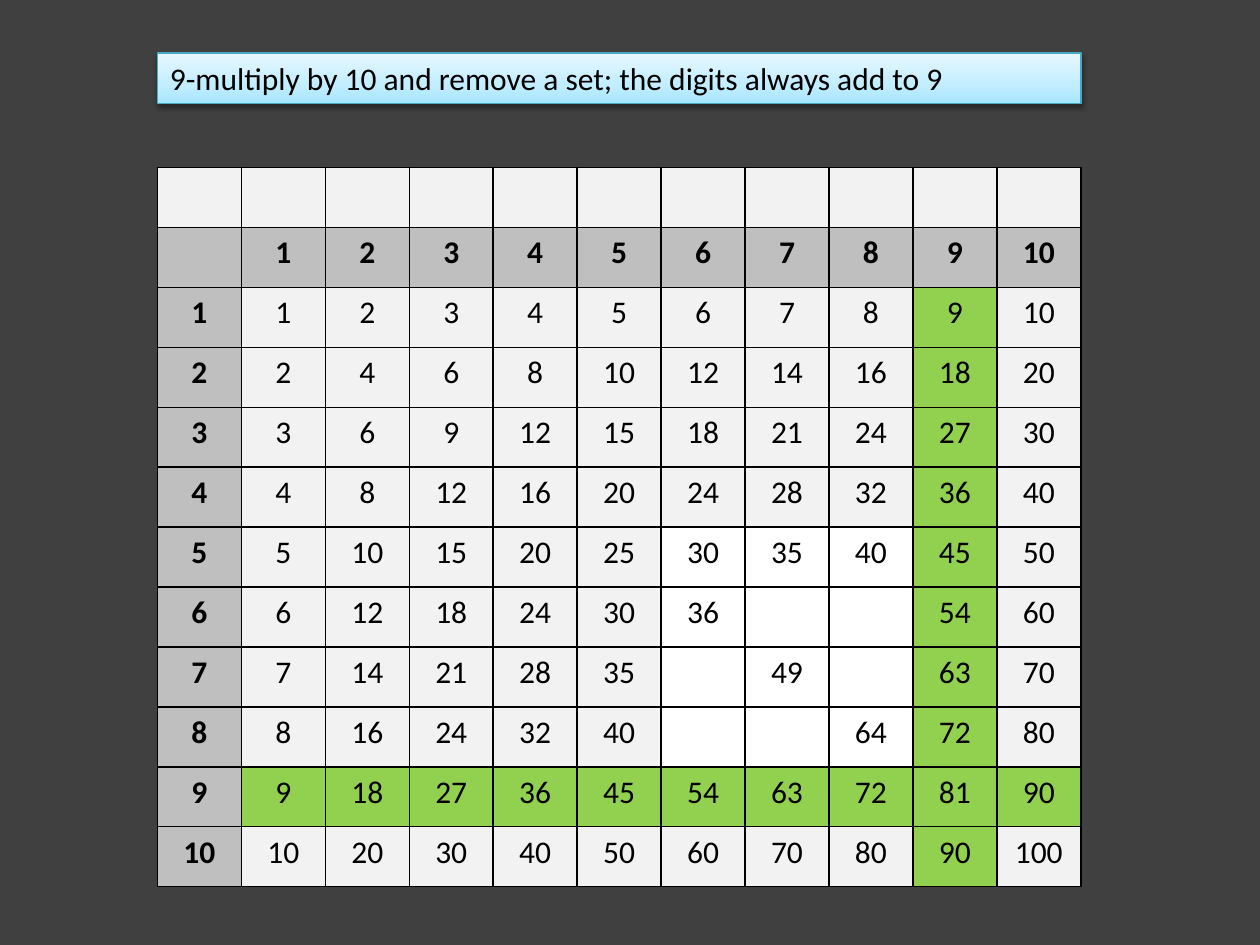
from lxml import etree
from pptx import Presentation
from pptx.dml.color import RGBColor
from pptx.enum import shapes, text
from pptx.oxml import parse_xml
from pptx.oxml.ns import nsdecls, qn
from pptx.util import Inches, Pt

# Content
TITLE = "9-multiply by 10 and remove a set; the digits always add to 9"
FACTORS = range(1, 11)
FOCUS = 9
OPEN_ROWS, OPEN_COLS = range(5, 9), range(6, 9)
UNKNOWN = {(6, 7), (6, 8), (7, 6), (7, 8), (8, 6), (8, 7)}

COLORS = {
    "background": "404040", "ink": "000000", "title_line": "46AAC5",
    "plain": "F2F2F2", "header": "BFBFBF", "focus": "92D050", "open": "FFFFFF",
}
TITLE_STOPS = [(0, "A7E6FF"), (35, "C1EDFF"), (100, "E7F8FF")]
FONT, SIZE = "Calibri", Pt(18)
LEFT, WIDTH = Inches(1.25), Inches(7.33)


def rgb(name):
    return RGBColor.from_string(COLORS[name])


def style_text(p, bold=False):
    for r in p.runs:
        r.font.name, r.font.size, r.font.bold = FONT, SIZE, bold
        r.font.color.rgb = rgb("ink")


def cell_content(row, col):
    """Return the text and fill name; factor rows and columns start at 1."""
    if row < 0:
        return "", "plain"
    if row == 0 or col == 0:
        return str(row or col or ""), "header"
    label = "" if (row, col) in UNKNOWN else str(row * col)
    if FOCUS in (row, col):
        return label, "focus"
    is_open = row in OPEN_ROWS and col in OPEN_COLS
    return label, "open" if is_open else "plain"


def add_borders(cell):
    tc_pr = cell._tc.get_or_add_tcPr()
    for i, side in enumerate(("lnL", "lnR", "lnT", "lnB")):
        ln = parse_xml(
            f'<a:{side} {nsdecls("a")} w="{Pt(1)}"><a:solidFill>'
            f'<a:srgbClr val="{COLORS["ink"]}"/></a:solidFill></a:{side}>')
        tc_pr.insert(i, ln)


prs = Presentation()
prs.slide_width, prs.slide_height = Inches(10), Inches(7.5)
s = prs.slides.add_slide(prs.slide_layouts[6])
s.background.fill.solid()
s.background.fill.fore_color.rgb = rgb("background")

# Multiplication table: one empty row, one header row, ten factor rows
n = len(FACTORS)
table = s.shapes.add_table(n + 2, n + 1, LEFT, Inches(1.33),
                           WIDTH, Inches(5.71)).table
for i in range(n + 2):
    for col in range(n + 1):
        row = i - 1
        cell = table.cell(i, col)
        label, fill = cell_content(row, col)
        cell.fill.solid()
        cell.fill.fore_color.rgb = rgb(fill)
        add_borders(cell)
        p = cell.text_frame.paragraphs[0]
        p.text = label
        p.alignment = text.PP_ALIGN.CENTER
        style_text(p, bold=fill == "header")

# Title bar
sp = s.shapes.add_shape(shapes.MSO_SHAPE.RECTANGLE, LEFT, Inches(0.42),
                        WIDTH, Inches(0.4))
sp.line.color.rgb = rgb("title_line")
sp.line.width = Pt(0.75)
tf = sp.text_frame
tf.text = TITLE
tf.word_wrap = True
tf.auto_size = text.MSO_AUTO_SIZE.SHAPE_TO_FIT_TEXT
tf.vertical_anchor = text.MSO_ANCHOR.TOP
tf.paragraphs[0].alignment = text.PP_ALIGN.LEFT
style_text(tf.paragraphs[0])

# Title gradient with three stops, running upwards
sp.fill.gradient()
sp.fill.gradient_angle = 90
stops = sp._element.spPr.find(".//" + qn("a:gsLst"))
for gs in list(stops):
    stops.remove(gs)
for percent, color in TITLE_STOPS:
    gs = etree.SubElement(stops, qn("a:gs"), pos=str(percent * 1000))
    etree.SubElement(gs, qn("a:srgbClr"), val=color)

# Title shadow
sp.shadow.inherit = False
effects = sp._element.spPr.find(qn("a:effectLst"))
effects.append(parse_xml(
    f'<a:outerShdw {nsdecls("a")} blurRad="{Pt(3.1)}" dist="{Pt(1.6)}" '
    f'dir="5400000" rotWithShape="0"><a:srgbClr val="{COLORS["ink"]}">'
    '<a:alpha val="38000"/></a:srgbClr></a:outerShdw>'))

prs.save("out.pptx")
